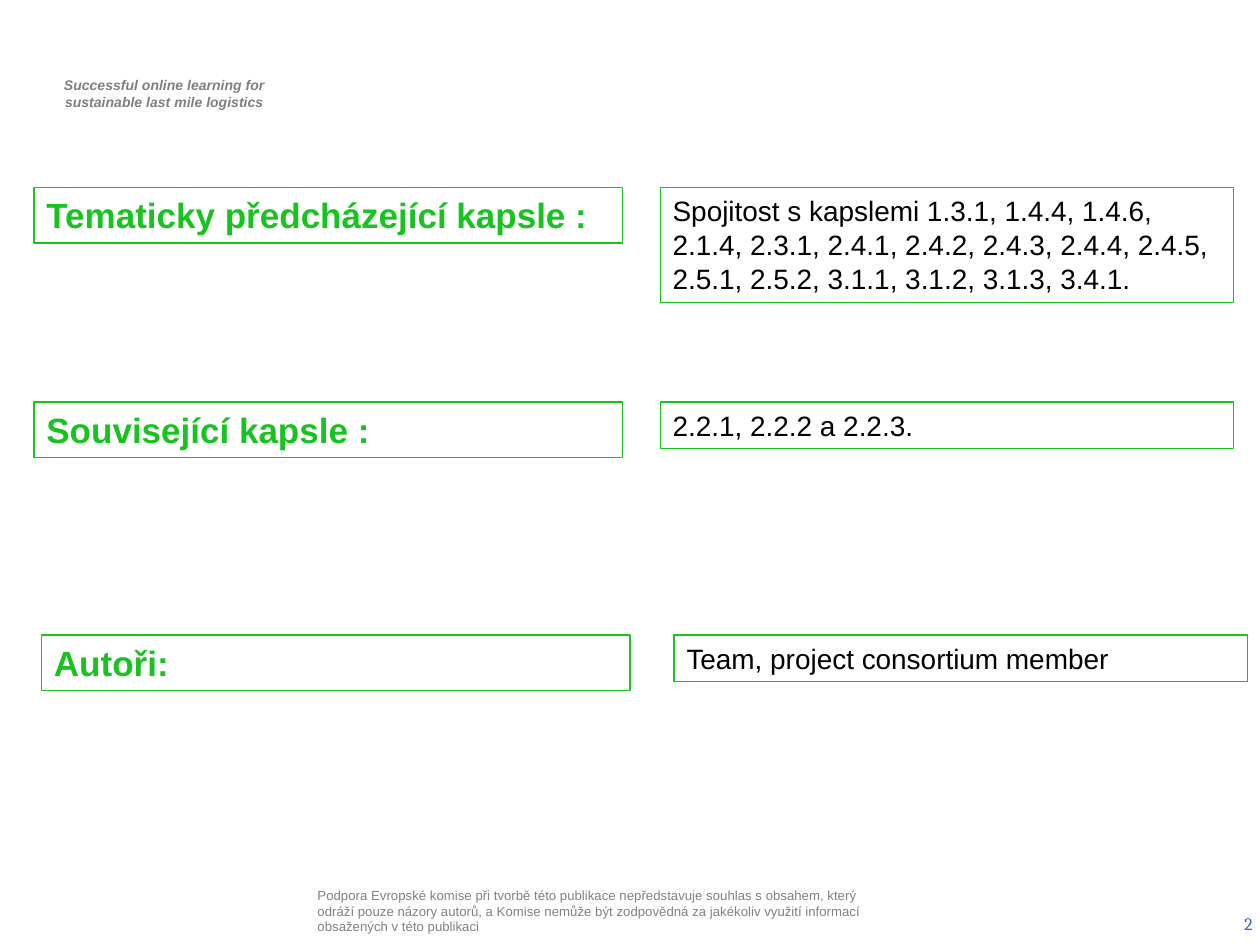
import pptx
import pptx.dml.color
import pptx.enum.shapes
import pptx.enum.text
import pptx.util

Inches = pptx.util.Inches
Align = pptx.enum.text.PP_ALIGN
Anchor = pptx.enum.text.MSO_ANCHOR
AutoSize = pptx.enum.text.MSO_AUTO_SIZE

THEME = {
    "white": "FFFFFF",
    "green": "18C320",
    "tagline": dict(font="Arial", size=8, color="7F7F7F", bold=True, italic=True),
    "disclaimer": dict(font="Arial", size=7.5, color="808080"),
    "number": dict(font="Cambria", size=10, color="3366CC"),
    "label": dict(font="Arial", size=20, color="18C320", bold=True),
    "value": dict(font="Arial", size=16, color="000000"),
}

TAGLINE = ["Successful online learning for", "sustainable last mile logistics"]
DISCLAIMER = (
    "Podpora Evropské komise při tvorbě této publikace nepředstavuje souhlas "
    "s obsahem, který odráží pouze názory autorů, a Komise nemůže být zodpovědná "
    "za jakékoliv využití informací obsažených v této publikaci"
)
SLIDE_NUMBER = "2"

# label, value, top, label left, value left, value height, value alignment
ROWS = [
    ("Tematicky předcházející kapsle :",
     "Spojitost s kapslemi 1.3.1, 1.4.4, 1.4.6, 2.1.4, 2.3.1, 2.4.1, 2.4.2, 2.4.3, "
     "2.4.4, 2.4.5, 2.5.1, 2.5.2, 3.1.1, 3.1.2, 3.1.3, 3.4.1.",
     1.49, 0.27, 5.24, 0.91, Align.LEFT),
    ("Související kapsle :", "2.2.1, 2.2.2 a 2.2.3.",
     3.19, 0.27, 5.24, 0.37, Align.JUSTIFY),
    ("Autoři:", "Team, project consortium member",
     5.04, 0.33, 5.35, 0.37, Align.LEFT),
]
LABEL_WIDTH, LABEL_HEIGHT, VALUE_WIDTH = 4.67, 0.44, 4.55


def rgb(code):
    return pptx.dml.color.RGBColor.from_string(code)


def write(shape, lines, style, align=Align.LEFT, anchor=Anchor.TOP,
          margins=(0.1, 0.05), grow=False):
    """Fill a shape with one paragraph per line; margins are (side, top and bottom)."""
    frame = shape.text_frame
    frame.word_wrap = True
    frame.auto_size = AutoSize.SHAPE_TO_FIT_TEXT if grow else AutoSize.NONE
    frame.vertical_anchor = anchor
    frame.margin_left = frame.margin_right = Inches(margins[0])
    frame.margin_top = frame.margin_bottom = Inches(margins[1])
    frame.text = "\n".join(lines)
    for paragraph in frame.paragraphs:
        paragraph.alignment = align
        font = paragraph.font
        font.name = style["font"]
        font.size = pptx.util.Pt(style["size"])
        font.color.rgb = rgb(style["color"])
        font.bold = style.get("bold", False)
        font.italic = style.get("italic", False)


def add_text(slide, box, lines, style, **options):
    write(slide.shapes.add_textbox(*map(Inches, box)), lines, style, **options)


def add_framed(slide, box, text, style, align=Align.LEFT):
    frame = slide.shapes.add_shape(
        pptx.enum.shapes.MSO_SHAPE.RECTANGLE, *map(Inches, box))
    frame.shadow.inherit = False
    frame.fill.solid()
    frame.fill.fore_color.rgb = rgb(THEME["white"])
    frame.line.color.rgb = rgb(THEME["green"])
    frame.line.width = pptx.util.Pt(0.75)
    write(frame, [text], style, align=align, grow=True)


def main():
    deck = pptx.Presentation()
    deck.slide_width, deck.slide_height = Inches(10), Inches(7.5)
    slide = deck.slides.add_slide(deck.slide_layouts[6])

    add_text(slide, (0.29, 0.56, 2.03, 0.37), TAGLINE, THEME["tagline"],
             align=Align.CENTER, grow=True)
    add_text(slide, (2.48, 6.98, 4.54, 0.5), [DISCLAIMER], THEME["disclaimer"],
             anchor=Anchor.MIDDLE, margins=(0.04, 0.04))
    add_text(slide, (7.71, 7.13, 2.33, 0.4), [SLIDE_NUMBER], THEME["number"],
             align=Align.RIGHT, anchor=Anchor.MIDDLE)

    for label, value, top, label_left, value_left, value_height, align in ROWS:
        add_framed(slide, (label_left, top, LABEL_WIDTH, LABEL_HEIGHT),
                   label, THEME["label"])
        add_framed(slide, (value_left, top, VALUE_WIDTH, value_height),
                   value, THEME["value"], align)

    deck.save("out.pptx")


if __name__ == "__main__":
    main()
